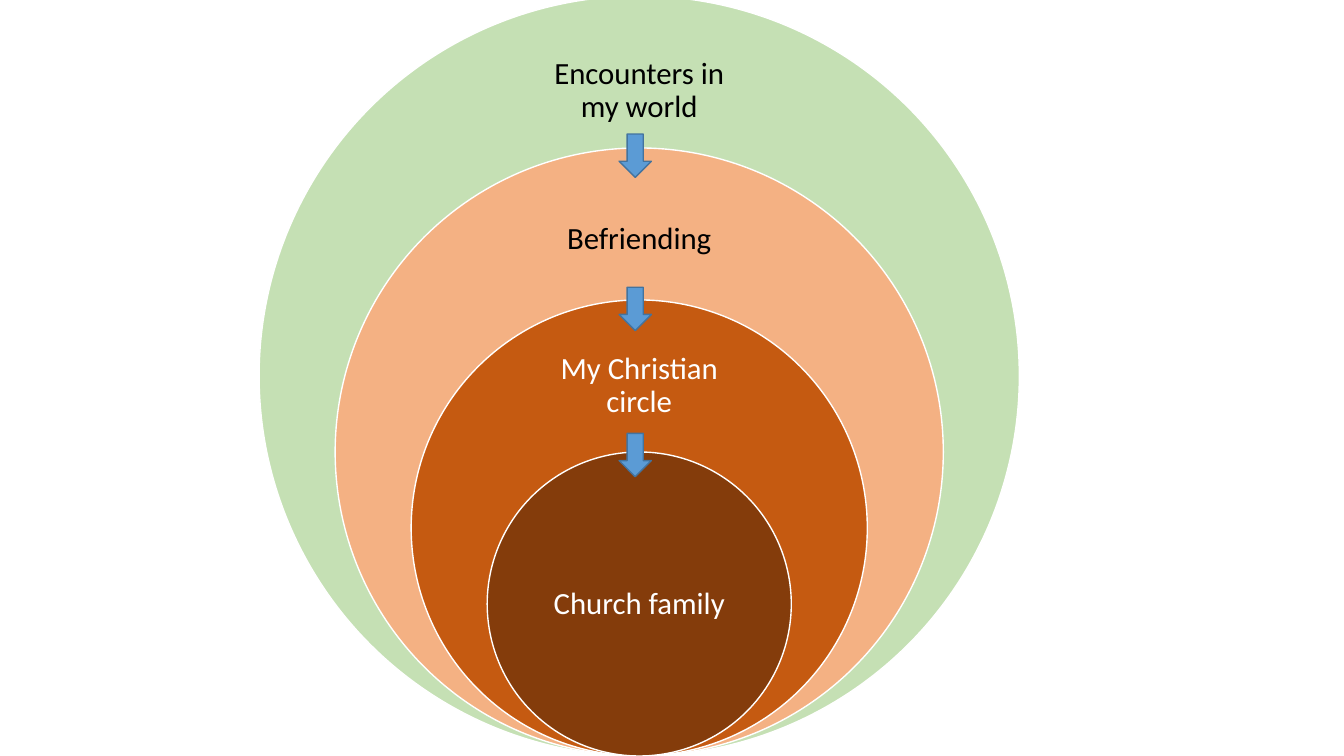
import pptx
import pptx.util
import pptx.dml.color
import pptx.enum.shapes
import pptx.enum.text
from dataclasses import dataclass

Inches = pptx.util.Inches
Shape = pptx.enum.shapes.MSO_SHAPE


@dataclass(frozen=True)
class Theme:
    font: str = "Calibri"
    label_size: int = 22
    line_width: int = 1
    dark: str = "000000"
    light: str = "FFFFFF"
    world: str = "C5E0B4"
    befriending: str = "F4B183"
    christian: str = "C55A11"
    church: str = "843C0B"
    arrow: str = "5B9BD5"
    arrow_line: str = "43739E"


def rgb(value):
    return pptx.dml.color.RGBColor.from_string(value)


class CircleSlide:
    def __init__(self, slide, theme):
        self.shapes = slide.shapes
        self.theme = theme

    def add_shape(self, kind, left, top, width, height, fill, line):
        shape = self.shapes.add_shape(
            kind, Inches(left), Inches(top), Inches(width), Inches(height))
        shape.shadow.inherit = False
        shape.fill.solid()
        shape.fill.fore_color.rgb = rgb(fill)
        shape.line.color.rgb = rgb(line)
        shape.line.width = pptx.util.Pt(self.theme.line_width)

    def add_circle(self, center, bottom, diameter, fill):
        self.add_shape(Shape.OVAL, center - diameter / 2, bottom - diameter,
                       diameter, diameter, fill, self.theme.light)

    def add_arrow(self, left, top):
        self.add_shape(Shape.DOWN_ARROW, left, top, 0.32, 0.43,
                       self.theme.arrow, self.theme.arrow_line)

    def add_label(self, wording, center, top, height, color):
        width = 2.11
        label = self.shapes.add_textbox(
            Inches(center - width / 2), Inches(top), Inches(width), Inches(height))
        frame = label.text_frame
        frame.word_wrap = True
        frame.vertical_anchor = pptx.enum.text.MSO_ANCHOR.MIDDLE
        frame.margin_left = frame.margin_right = Inches(0.17)
        frame.margin_top = frame.margin_bottom = Inches(0.17)
        paragraph = frame.paragraphs[0]
        paragraph.alignment = pptx.enum.text.PP_ALIGN.CENTER
        paragraph.line_spacing = 0.9
        run = paragraph.add_run()
        run.text = wording
        run.font.name = self.theme.font
        run.font.size = pptx.util.Pt(self.theme.label_size)
        run.font.color.rgb = rgb(color)


def main():
    theme = Theme()
    deck = pptx.Presentation()
    deck.slide_width, deck.slide_height = Inches(13.33), Inches(7.5)
    blank_layout = deck.slide_layouts[6]
    page = CircleSlide(deck.slides.add_slide(blank_layout), theme)

    # Nested circles share a center line and rest on the slide's bottom edge
    center, bottom, outer_diameter = 6.34, 7.5, 7.54
    circles = [  # wording, fill, text color, label top, label height
        ("Encounters in my world", theme.world, theme.dark, 0.34, 1.13),
        ("Befriending", theme.befriending, theme.dark, 1.83, 1.09),
        ("My Christian circle", theme.christian, theme.light, 3.32, 1.02),
        ("Church family", theme.church, theme.light, 5.24, 1.51),
    ]
    for level, (wording, fill, color, top, height) in enumerate(circles):
        page.add_circle(center, bottom, outer_diameter * (5 - level) / 5, fill)
        page.add_label(wording, center, top, height, color)

    # Arrows lead from each circle into the next
    for arrow_top in (1.33, 2.85, 4.3):
        page.add_arrow(6.14, arrow_top)

    deck.save("out.pptx")


if __name__ == "__main__":
    main()
